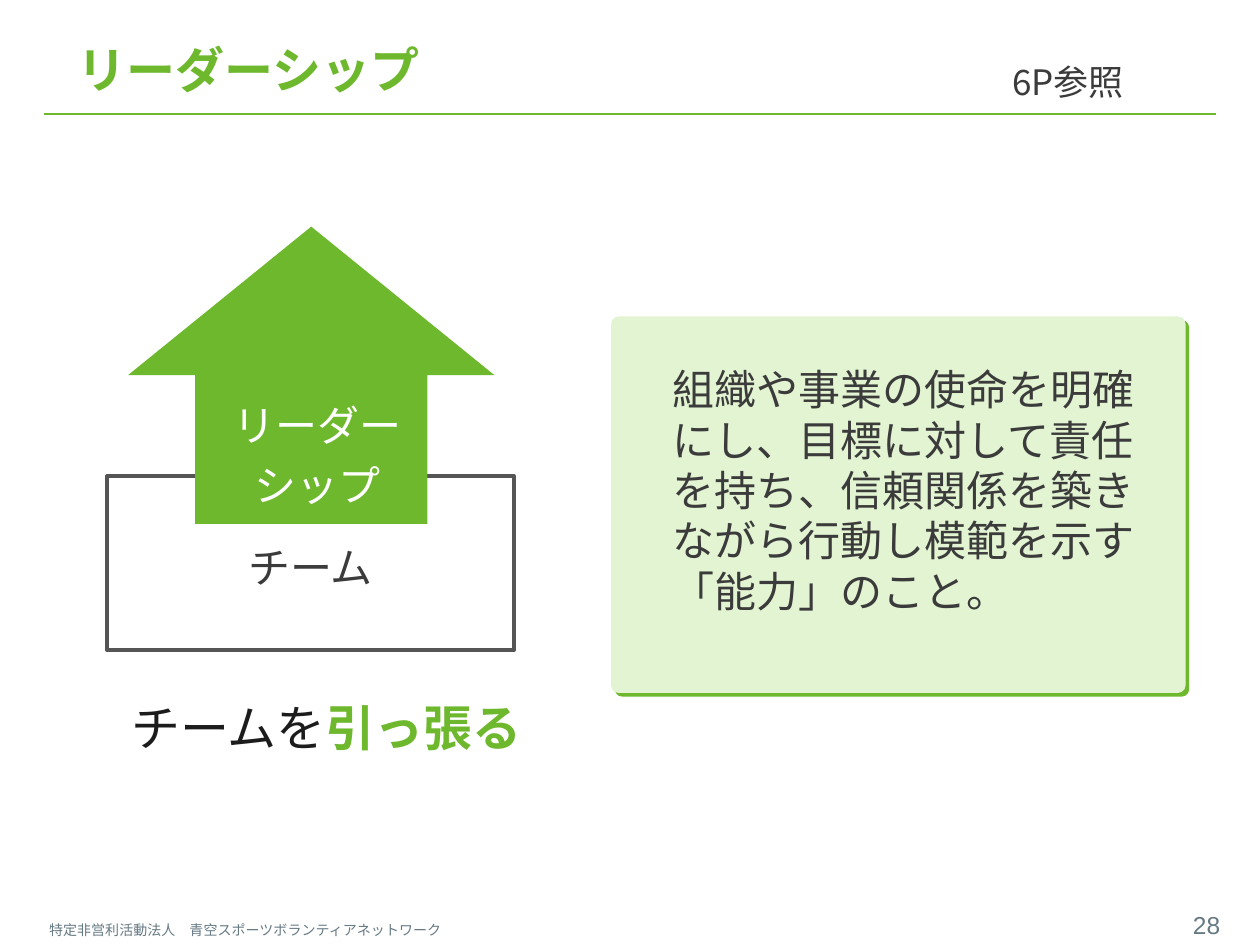
import pptx
import pptx.util
import pptx.dml.color
import pptx.enum.shapes
import pptx.enum.text
import pptx.oxml
import pptx.oxml.ns
from pptx.util import Cm

# Content
TITLE = "リーダーシップ"
REFERENCE = "6P参照"
TEAM = "チーム"
ARROW = ["リーダー", "シップ"]
CAPTION = [("チームを", "1C1C1C", False), ("引っ張る", "6EB82D", True)]
DEFINITION = ("組織や事業の使命を明確にし、目標に対して責任を持ち、信頼関係を築きながら"
              "行動し模範を示す「能力」のこと。")
FOOTER = "特定非営利活動法人　青空スポーツボランティアネットワーク"
PAGE_NUMBER = "28"

# Style
GREEN, PALE, DARK = "6EB82D", "E2F4D2", "3B3B3B"
FRAME, GREY, WHITE = "555555", "657983", "FFFFFF"
JAPANESE = "Noto Sans CJK JP"
KINDS = pptx.enum.shapes.MSO_SHAPE
ANCHOR = pptx.enum.text.MSO_ANCHOR
ALIGN = pptx.enum.text.PP_ALIGN


def color(value):
    return pptx.dml.color.RGBColor.from_string(value)


def write(box, text, size=24, fill=DARK, bold=False, font=JAPANESE, align=ALIGN.LEFT,
          anchor=ANCHOR.MIDDLE, insets=(0.25, 0.13, 0.25, 0.13), gap=0):
    """Fill a box; text is a string, or a list of paragraphs made of (text, colour, bold)."""
    frame = box.text_frame
    frame.word_wrap = True
    frame.vertical_anchor = anchor
    (frame.margin_left, frame.margin_top,
     frame.margin_right, frame.margin_bottom) = map(Cm, insets)
    paragraphs = [[(text, fill, bold)]] if isinstance(text, str) else text
    for index, spans in enumerate(paragraphs):
        para = frame.add_paragraph() if index else frame.paragraphs[0]
        para.alignment = align
        if index:
            para.space_before = pptx.util.Pt(gap)
        for words, tint, strong in spans:
            span = para.add_run()
            span.text = words
            span.font.size = pptx.util.Pt(size)
            span.font.name = font
            span.font.bold = strong
            span.font.color.rgb = color(tint)
            east = pptx.oxml.parse_xml(
                f'<a:ea {pptx.oxml.ns.nsdecls("a")} typeface="{font}"/>')
            span.font._element.find(pptx.oxml.ns.qn("a:latin")).addnext(east)


def add_text(page, place, text, **style):
    write(page.shapes.add_textbox(*map(Cm, place)), text, **style)


def add_shape(page, kind, place, fill=None, line=None, adjust=()):
    shape = page.shapes.add_shape(kind, *map(Cm, place))
    shape.shadow.inherit = False
    for index, value in enumerate(adjust):
        shape.adjustments[index] = value
    if fill:
        shape.fill.solid()
        shape.fill.fore_color.rgb = color(fill)
    else:
        shape.fill.background()
    if line:
        shape.line.color.rgb = color(line)
        shape.line.width = pptx.util.Pt(2.25)
    else:
        shape.line.fill.background()
    return shape


def add_effects(shape, content=""):
    properties = shape._element.spPr
    for old in properties.findall(pptx.oxml.ns.qn("a:effectLst")):
        properties.remove(old)
    properties.append(pptx.oxml.parse_xml(
        f'<a:effectLst {pptx.oxml.ns.nsdecls("a")}>{content}</a:effectLst>'))


def main():
    deck = pptx.Presentation()
    deck.slide_width, deck.slide_height = Cm(25.4), Cm(19.05)
    page = deck.slides.add_slide(deck.slide_layouts[6])

    # Footer, page number and heading rule
    add_text(page, (0.99, 18.44, 13.03, 0.61), FOOTER, size=8, fill=GREY,
             insets=(0, 0.13, 0.25, 0.13))
    add_text(page, (23.55, 18.21, 1.3, 0.86), PAGE_NUMBER, size=14, fill=GREY,
             font="Arial", align=ALIGN.RIGHT)
    rule = page.shapes.add_connector(pptx.enum.shapes.MSO_CONNECTOR.STRAIGHT,
                                     Cm(0.89), Cm(2.3), Cm(24.51), Cm(2.3))
    rule.line.color.rgb = color(GREEN)
    rule.line.width = pptx.util.Pt(1.5)
    add_effects(rule)

    # Heading
    add_text(page, (1.57, 0.74, 20.09, 1.32), TITLE, size=28, fill=GREEN, bold=True,
             insets=(0, 0.13, 0.25, 0.13))
    add_text(page, (18.26, 0.74, 4.65, 1.65), REFERENCE, size=20, align=ALIGN.RIGHT,
             insets=(0.25, 0.27, 0.25, 0.13))

    # Team frame, caption and the arrow that rises from the frame
    team = add_shape(page, KINDS.RECTANGLE, (2.16, 9.6, 8.2, 3.51), line=FRAME)
    write(team, TEAM, align=ALIGN.CENTER, insets=(0.25, 0.25, 0.25, 0.13))
    add_text(page, (1.19, 13.41, 10.77, 2.41), [CAPTION], size=28, align=ALIGN.CENTER,
             insets=(0.25, 0.2, 0.25, 0.13))
    arrow = add_shape(page, KINDS.UP_ARROW, (2.58, 4.57, 7.39, 5.99), fill=GREEN,
                      adjust=(0.634, 0.5))
    write(arrow, [[(line, WHITE, False)] for line in ARROW], align=ALIGN.CENTER,
          anchor=ANCHOR.BOTTOM, insets=(0.5, 0, 0.25, 0.28), gap=5.3)

    # Definition card with a hard green shadow (3 pt at 45 degrees)
    card = add_shape(page, KINDS.ROUNDED_RECTANGLE, (12.32, 6.38, 11.58, 7.59),
                     fill=PALE, adjust=(0.02,))
    add_effects(card, '<a:outerShdw blurRad="0" dist="38100" dir="2700000" algn="tl" '
                      f'rotWithShape="0"><a:srgbClr val="{GREEN}"/></a:outerShdw>')
    write(card, DEFINITION, anchor=ANCHOR.TOP, insets=(1.19, 0.91, 0.89, 0))

    deck.save("out.pptx")


if __name__ == "__main__":
    main()
